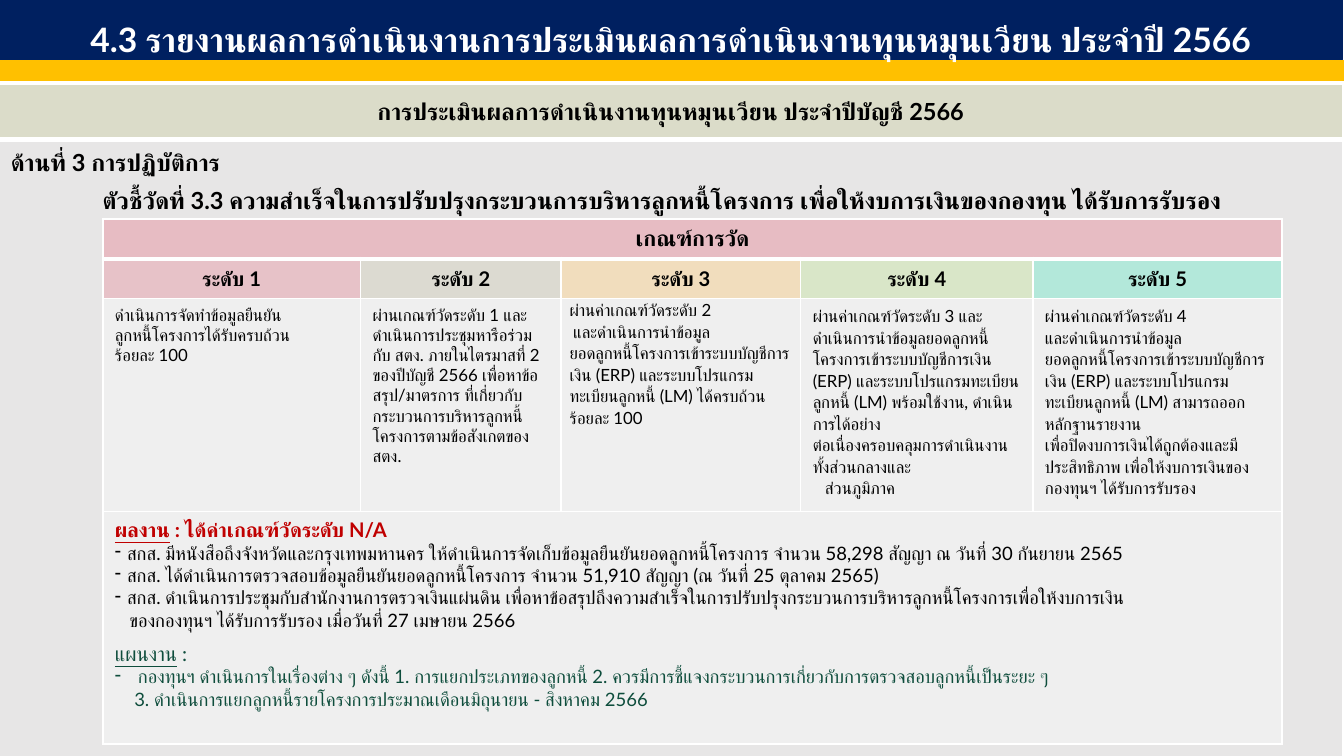
from lxml import etree
from pptx import Presentation
from pptx.dml.color import RGBColor
from pptx.enum.shapes import MSO_SHAPE
from pptx.enum.text import MSO_ANCHOR, PP_ALIGN
from pptx.oxml.ns import qn
from pptx.util import Inches, Pt

RECT = MSO_SHAPE.RECTANGLE
CENTER, LEFT = PP_ALIGN.CENTER, PP_ALIGN.LEFT
MIDDLE, TOP = MSO_ANCHOR.MIDDLE, MSO_ANCHOR.TOP
WIDTH, HEIGHT = 11.11, 6.25
FONT = "Lato"
COLORS = {
    "navy": "002060", "gold": "FFC000", "white": "FFFFFF", "black": "000000",
    "sage": "DBDCC9", "grey": "E7E6E6", "paper": "F2F2F2", "pink": "E8ABB5",
    "stone": "D6D2C4", "peach": "F9D8A3", "lime": "D1E6B5", "mint": "91EAD2",
    "red": "C00000", "green": "0E4D3C",
}

LEVELS = [
    ("ระดับ 1", "pink", ["ดำเนินการจัดทำข้อมูลยืนยัน", "ลูกหนี้โครงการได้รับครบถ้วน", "ร้อยละ 100"],
     {}),
    ("ระดับ 2", "stone",
     ["ผ่านเกณฑ์วัดระดับ 1 และดำเนินการประชุมหารือร่วมกับ สตง. ภายในไตรมาสที่ 2 ของปีบัญชี 2566 "
      "เพื่อหาข้อสรุป/มาตรการ ที่เกี่ยวกับกระบวนการบริหารลูกหนี้โครงการตามข้อสังเกตของ สตง."],
     {}),
    ("ระดับ 3", "peach",
     ["ผ่านค่าเกณฑ์วัดระดับ 2", ("และดำเนินการนำข้อมูล", {"indent": 0.03}),
      "ยอดลูกหนี้โครงการเข้าระบบบัญชีการเงิน (ERP) และระบบโปรแกรมทะเบียนลูกหนี้ (LM) ได้ครบถ้วน ร้อยละ 100"],
     {"spacing": 1.07, "inset": (0.07, 0)}),
    ("ระดับ 4", "lime",
     ["ผ่านค่าเกณฑ์วัดระดับ 3 และดำเนินการนำข้อมูลยอดลูกหนี้โครงการเข้าระบบบัญชีการเงิน (ERP) "
      "และระบบโปรแกรมทะเบียนลูกหนี้ (LM) พร้อมใช้งาน, ดำเนินการได้อย่าง",
      "ต่อเนื่องครอบคลุมการดำเนินงานทั้งส่วนกลางและ", ("ส่วนภูมิภาค", {"indent": 0.1})],
     {"spacing": 1.07}),
    ("ระดับ 5", "mint",
     ["ผ่านค่าเกณฑ์วัดระดับ 4", "และดำเนินการนำข้อมูล",
      "ยอดลูกหนี้โครงการเข้าระบบบัญชีการเงิน (ERP) และระบบโปรแกรมทะเบียนลูกหนี้ (LM) สามารถออกหลักฐานรายงาน",
      "เพื่อปิดงบการเงินได้ถูกต้องและมีประสิทธิภาพ เพื่อให้งบการเงินของกองทุนฯ ได้รับการรับรอง"],
     {"spacing": 1.07}),
]

DASH = {"bullet": "-", "indent": 0.1}
PLAN = {"color": "green"}
RESULTS = [
    (" : ได้ค่าเกณฑ์วัดระดับ N/A", {"lead": "ผลงาน", "size": 12, "color": "red", "bold": True}),
    ("สกส. มีหนังสือถึงจังหวัดและกรุงเทพมหานคร ให้ดำเนินการจัดเก็บข้อมูลยืนยันยอดลูกหนี้โครงการ "
     "จำนวน 58,298 สัญญา ณ วันที่ 30 กันยายน 2565", DASH),
    ("สกส. ได้ดำเนินการตรวจสอบข้อมูลยืนยันยอดลูกหนี้โครงการ จำนวน 51,910 สัญญา (ณ วันที่ 25 ตุลาคม 2565)", DASH),
    ("สกส. ดำเนินการประชุมกับสำนักงานการตรวจเงินแผ่นดิน "
     "เพื่อหาข้อสรุปถึงความสำเร็จในการปรับปรุงกระบวนการบริหารลูกหนี้โครงการเพื่อให้งบการเงิน", DASH),
    ("ของกองทุนฯ ได้รับการรับรอง เมื่อวันที่ 27 เมษายน 2566", {"indent": 0.12}),
    (" :", {**PLAN, "lead": "แผนงาน", "size": 12, "before": 6}),
    ("กองทุนฯ ดำเนินการในเรื่องต่าง ๆ ดังนี้ 1. การแยกประเภทของลูกหนี้ "
     "2. ควรมีการชี้แจงกระบวนการเกี่ยวกับการตรวจสอบลูกหนี้เป็นระยะ ๆ", {**PLAN, "bullet": "-", "indent": 0.19}),
    ("3. ดำเนินการแยกลูกหนี้รายโครงการประมาณเดือนมิถุนายน - สิงหาคม 2566", {**PLAN, "indent": 0.16}),
]


def rgb(name):
    return RGBColor.from_string(COLORS[name])


def add_run(p, text, size, color, bold, underline=False):
    r = p.add_run()
    r.text = text
    font = r.font
    font.name, font.size, font.bold, font.underline = FONT, Pt(size), bold, underline
    font.color.rgb = rgb(color)
    etree.SubElement(r._r.get_or_add_rPr(), qn("a:cs")).set("typeface", FONT)


def add_paragraph(p, text, size=10, color="black", bold=False, align=LEFT, spacing=None,
                  before=0, after=0, indent=0, bullet=None, lead=None):
    """Fill one paragraph; lead is an underlined opening, bullet a hanging sign."""
    p.alignment = align
    p.space_before, p.space_after = Pt(before), Pt(after)
    if spacing:
        p.line_spacing = spacing
    pPr = p._p.get_or_add_pPr()
    pPr.set("marL", str(Inches(indent)))
    pPr.set("indent", str(-Inches(indent) if bullet else 0))
    if bullet:
        etree.SubElement(pPr, qn("a:buChar")).set("char", bullet)
    if lead:
        add_run(p, lead, size, color, bold, True)
    add_run(p, text, size, color, bold)


def write(tf, paragraphs, **fmt):
    """Write strings, or (string, own format) pairs, over a shared format."""
    for i, item in enumerate(paragraphs):
        text, own = (item, {}) if isinstance(item, str) else item
        p = tf.add_paragraph() if i else tf.paragraphs[0]
        add_paragraph(p, text, **{**fmt, **own})


class SlideBuilder:
    """Places elements on a grid of 100 columns by 100 rows."""

    def __init__(self, prs):
        self.s = prs.slides.add_slide(prs.slide_layouts[6])
        self.col, self.row = prs.slide_width / 100, prs.slide_height / 100

    def box(self, x, y, w, h):
        return [int(v) for v in (x * self.col, y * self.row, w * self.col, h * self.row)]

    def bar(self, at, fill, paragraphs=(), **fmt):
        sp = self.s.shapes.add_shape(RECT, *self.box(*at))
        sp.shadow.inherit = False
        sp.fill.solid()
        sp.fill.fore_color.rgb = sp.line.color.rgb = rgb(fill)
        sp.line.width = Pt(1)
        sp.text_frame.word_wrap = True
        sp.text_frame.vertical_anchor = MIDDLE
        write(sp.text_frame, paragraphs, **fmt)

    def table(self, x, y, cols, rows):
        at = self.box(x, y, sum(cols), sum(rows))
        table = self.s.shapes.add_table(len(rows), len(cols), *at).table
        table.first_row = table.horz_banding = False
        for column, w in zip(table.columns, cols):
            column.width = int(w * self.col)
        for row, h in zip(table.rows, rows):
            row.height = int(h * self.row)
        return table

    def cell(self, cell, fill, paragraphs=(), alpha=100, anchor=TOP, inset=(0.1, 0.05),
             top=1, bottom=1, **fmt):
        """Style a cell; top and bottom are the widths of its rules in points."""
        cell.margin_left = cell.margin_right = Inches(inset[0])
        cell.margin_top = cell.margin_bottom = Inches(inset[1])
        cell.vertical_anchor = anchor
        cell.fill.solid()
        cell.fill.fore_color.rgb = rgb(fill)
        tcPr = cell._tc.get_or_add_tcPr()
        shade = tcPr.find(".//" + qn("a:srgbClr"))
        etree.SubElement(shade, qn("a:alpha")).set("val", str(alpha * 1000))
        for i, (side, width) in enumerate(zip("LRTB", (1, 1, top, bottom))):
            ln = etree.Element(qn("a:ln" + side), w=str(Pt(width)))
            solid = etree.SubElement(ln, qn("a:solidFill"))
            etree.SubElement(solid, qn("a:srgbClr")).set("val", COLORS["white"])
            tcPr.insert(i, ln)
        write(cell.text_frame, paragraphs, **fmt)


def add_frame(sb):
    table = sb.table(-0.1, 11.1, [100], [7.36, 81.6])
    style = {"inset": (0.1, 0.07), "size": 14, "bold": True}
    sb.cell(table.cell(0, 0), "sage", ["การประเมินผลการดำเนินงานทุนหมุนเวียน ประจำปีบัญชี 2566"],
            anchor=MIDDLE, align=CENTER, bottom=3, **style)
    sb.cell(table.cell(1, 0), "grey", [
        ("ด้านที่ 3 การปฏิบัติการ", {"after": 6}),
        ("ตัวชี้วัดที่ 3.3 ความสำเร็จในการปรับปรุงกระบวนการบริหารลูกหนี้โครงการ "
         "เพื่อให้งบการเงินของกองทุน ได้รับการรับรอง", {"indent": 0.76}),
    ], top=3, **style)


def add_criteria(sb):
    table = sb.table(7.65, 28.96, [19.17, 14.94, 17.82, 17.28, 18.54], [5.28, 5.28, 28.16, 30.72])
    last = len(LEVELS) - 1
    for row in (0, 3):
        table.cell(row, 0).merge(table.cell(row, last))
    for i, (level, color, details, fmt) in enumerate(LEVELS):
        sb.cell(table.cell(0, i), "pink", [] if i else ["เกณฑ์การวัด"], alpha=70, bottom=3,
                size=13, bold=True, align=CENTER)
        sb.cell(table.cell(1, i), color, [level], alpha=60, anchor=MIDDLE, top=3,
                size=12, bold=True, align=CENTER)
        sb.cell(table.cell(2, i), "paper", details, alpha=80, **fmt)
        sb.cell(table.cell(3, i), "paper", [] if i else RESULTS, alpha=80, size=11)


def main():
    prs = Presentation()
    prs.slide_width, prs.slide_height = Inches(WIDTH), Inches(HEIGHT)
    sb = SlideBuilder(prs)
    sb.bar((0, 8, 100, 2.56), "gold")
    add_frame(sb)
    sb.bar((-0.1, -0.3, 100, 8.2), "navy",
           ["4.3 รายงานผลการดำเนินงานการประเมินผลการดำเนินงานทุนหมุนเวียน ประจำปี 2566"],
           size=20, color="white", bold=True, align=CENTER, spacing=1.5)
    add_criteria(sb)
    prs.save("out.pptx")


if __name__ == "__main__":
    main()
